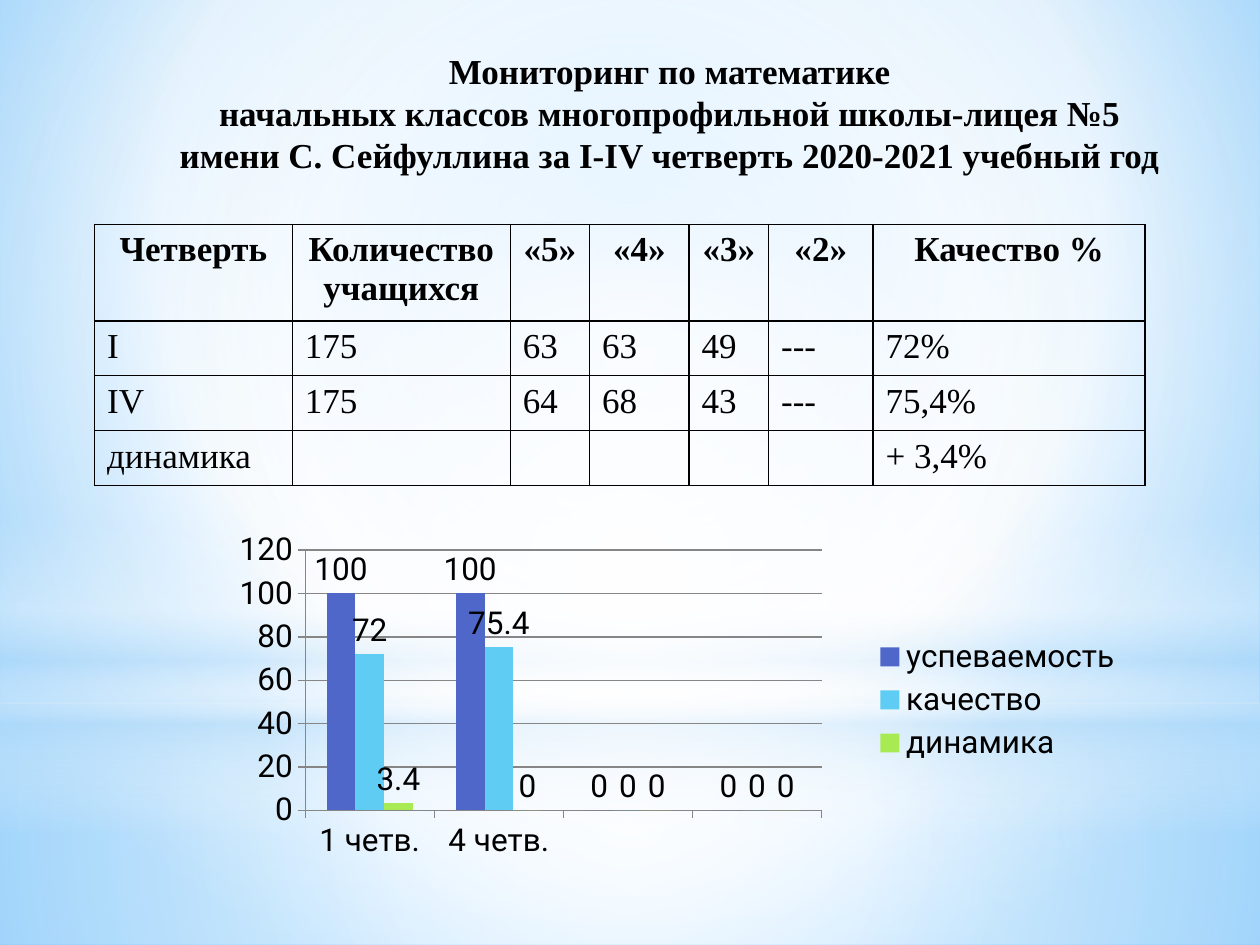
from dataclasses import dataclass
from typing import Optional

import lxml.etree
import pptx
import pptx.chart.data
import pptx.dml.color
import pptx.enum.chart
import pptx.enum.shapes
import pptx.enum.text
import pptx.oxml
import pptx.oxml.ns
import pptx.util

SLIDE_W, SLIDE_H = pptx.util.Inches(10), pptx.util.Inches(7.5)
SERIF, SANS = "Times New Roman", "Roboto"
COLORS = {
    "text": "000000", "axis": "868686", "white": "FFFFFF", "haze": "B4DCFA",
    "sky": "9ED5FF", "deep_sky": "5BB9FF",
    "success": "4E67C8", "quality": "5ECCF3", "dynamics": "A7EA52",
}
SHAPES = pptx.enum.shapes.MSO_SHAPE
ALIGN = pptx.enum.text.PP_ALIGN


@dataclass
class Area:
    """Place on the slide, in percent of its width and height."""
    left: float
    top: float
    width: float
    height: float

    def box(self) -> tuple:
        return (share_x(self.left), share_y(self.top),
                share_x(self.width), share_y(self.height))


@dataclass
class Gradient:
    """Stops are (position, colour, opacity); without an angle it is circular."""
    stops: list
    angle: Optional[int] = None
    focus: tuple = (50, 50, 50, 50)


@dataclass
class Glow:
    preset: int
    area: Area
    gradient: Gradient


@dataclass
class Series:
    name: str
    values: tuple
    color: str


def share_x(percent: float) -> int:
    return round(SLIDE_W * percent / 100)


def share_y(percent: float) -> int:
    return round(SLIDE_H * percent / 100)


def rgb(name: str) -> pptx.dml.color.RGBColor:
    return pptx.dml.color.RGBColor.from_string(COLORS[name])


def xml(tag: str, body: str, attributes: str = ""):
    prefix = tag.split(":")[0]
    return pptx.oxml.parse_xml(
        f"<{tag} {pptx.oxml.ns.nsdecls(prefix)} {attributes}>{body}</{tag}>")


def apply_gradient(fill, owner, gradient: Gradient) -> None:
    fill.solid()
    solid = owner.xpath(".//p:bgPr/a:solidFill | ./p:spPr/a:solidFill")[0]
    stops = "".join(
        f'<a:gs pos="{pos * 1000}"><a:srgbClr val="{COLORS[color]}">'
        f'<a:alpha val="{opacity * 1000}"/></a:srgbClr></a:gs>'
        for pos, color, opacity in gradient.stops)
    if gradient.angle is None:
        sides = " ".join(f'{side}="{value * 1000}"'
                         for side, value in zip("ltrb", gradient.focus))
        course = f'<a:path path="circle"><a:fillToRect {sides}/></a:path>'
    else:
        course = f'<a:lin ang="{gradient.angle * 60000}" scaled="0"/>'
    solid.getparent().replace(
        solid, xml("a:gradFill", f"<a:gsLst>{stops}</a:gsLst>{course}", 'rotWithShape="1"'))


def write(frame, *paragraphs: str, bold: bool = False, align=ALIGN.LEFT,
          size: int = 20, font: str = SERIF, color: str = "text") -> None:
    for index, text in enumerate(paragraphs):
        paragraph = frame.add_paragraph() if index else frame.paragraphs[0]
        paragraph.alignment = align
        style(paragraph.font, size, font, color)
        if text:
            run = paragraph.add_run()
            run.text = text
            style(run.font, size, font, color)
            run.font.bold = bold


def style(font, size: int, name: str, color: str) -> None:
    font.size, font.name = pptx.util.Pt(size), name
    font.color.rgb = rgb(color)


def add_glow(slide, glow: Glow) -> None:
    shape = slide.shapes.add_shape(glow.preset, *glow.area.box())
    shape.shadow.inherit = False
    shape.line.fill.background()
    apply_gradient(shape.fill, shape.element, glow.gradient)


def add_border(cell) -> None:
    properties = cell._tc.get_or_add_tcPr()
    for index, side in enumerate(("lnL", "lnR", "lnT", "lnB")):
        properties.insert(index, xml(
            f"a:{side}", f'<a:solidFill><a:srgbClr val="{COLORS["text"]}"/></a:solidFill>',
            'w="12700"'))


def add_results(slide, area: Area, columns: list, heights: list, rows: list) -> None:
    table = slide.shapes.add_table(len(rows), len(columns), *area.box()).table
    table.horz_banding = table.first_row = False
    for column, width in zip(table.columns, columns):
        column.width = share_x(width)
    for r, values in enumerate(rows):
        table.rows[r].height = share_y(heights[r])
        for c, value in enumerate(values):
            cell = table.cell(r, c)
            cell.fill.background()
            add_border(cell)
            write(cell.text_frame, value, bold=r == 0,
                  align=ALIGN.LEFT if r else ALIGN.CENTER)


def add_progress(slide, area: Area, categories: list, series: list, plot_area: dict) -> None:
    data = pptx.chart.data.CategoryChartData()
    data.categories = categories
    for item in series:
        data.add_series(item.name, item.values)
    chart = slide.shapes.add_chart(
        pptx.enum.chart.XL_CHART_TYPE.COLUMN_CLUSTERED, *area.box(), data).chart
    chart.has_title = False
    style(chart.font, 18, SANS, "text")
    chart.has_legend = True
    chart.legend.position = pptx.enum.chart.XL_LEGEND_POSITION.RIGHT
    chart.legend.include_in_layout = False

    plot = chart.plots[0]
    plot.gap_width, plot.overlap, plot.vary_by_categories = 150, 0, False
    for bars, item in zip(plot.series, series):
        bars.format.fill.solid()
        bars.format.fill.fore_color.rgb = rgb(item.color)
        bars.data_labels.show_value = True

    value_axis = chart.value_axis
    value_axis.has_major_gridlines = True
    value_axis.minimum_scale, value_axis.maximum_scale, value_axis.major_unit = 0, 120, 20
    for part in (value_axis, chart.category_axis, value_axis.major_gridlines):
        part.format.line.color.rgb = rgb("axis")
        part.format.line.width = pptx.util.Pt(0.75)

    # Inner plot area, in shares of the chart
    layout = "".join(f'<c:{key} val="{value}"/>' for key, value in plot_area.items())
    target = chart._chartSpace.xpath("c:chart/c:plotArea")[0]
    for old in target.xpath("c:layout"):
        target.remove(old)
    target.insert(0, xml("c:layout", '<c:manualLayout><c:layoutTarget val="inner"/>'
                         '<c:xMode val="edge"/><c:yMode val="edge"/>'
                         f"{layout}</c:manualLayout>"))


BACKDROP = Gradient([(0, "sky", 100), (60, "white", 100), (100, "deep_sky", 100)],
                    focus=(20, 10, 20, 60))
GLOWS = [
    Glow(SHAPES.RECTANGLE, Area(0, 74.4, 100, 25.6),
         Gradient([(0, "white", 91), (37, "white", 76), (100, "haze", 79)])),
    Glow(SHAPES.RECTANGLE, Area(0, 0, 100, 74.4),
         Gradient([(0, "white", 89), (48, "white", 62), (100, "haze", 79)])),
    Glow(SHAPES.RECTANGLE, Area(0, 54.93, 100, 33.33),
         Gradient([(0, "white", 0), (29, "white", 30), (45, "haze", 40),
                   (55, "white", 26), (65, "haze", 60), (100, "white", 0)], angle=90)),
    Glow(SHAPES.OVAL, Area(0, 23.33, 100, 74.4),
         Gradient([(0, "white", 100), (56, "white", 0)])),
]
RESULTS = [
    ["Четверть", "Количество учащихся", "«5»", "«4»", "«3»", "«2»", "Качество %"],
    ["І", "175", "63", "63", "49", "---", "72%"],
    ["ІV", "175", "64", "68", "43", "---", "75,4%"],
    ["динамика", "", "", "", "", "", "+ 3,4%"],
]
PROGRESS = [
    Series("успеваемость", (100, 100, 0, 0), "success"),
    Series("качество", (72, 75.4, 0, 0), "quality"),
    Series("динамика", (3.4, 0, 0, 0), "dynamics"),
]


def main() -> None:
    deck = pptx.Presentation()
    deck.slide_width, deck.slide_height = SLIDE_W, SLIDE_H
    slide = deck.slides.add_slide(deck.slide_layouts[6])

    # Sky backdrop
    apply_gradient(slide.background.fill, slide.element, BACKDROP)
    for glow in GLOWS:
        add_glow(slide, glow)

    # Title
    title = slide.shapes.add_textbox(*Area(13, 4.53, 80.3, 14.8).box()).text_frame
    title.word_wrap = True
    title.auto_size = pptx.enum.text.MSO_AUTO_SIZE.SHAPE_TO_FIT_TEXT
    write(title, "Мониторинг по математике",
          "начальных классов многопрофильной школы-лицея №5 "
          "имени С. Сейфуллина за І-ІV четверть 2020-2021 учебный год",
          bold=True, align=ALIGN.CENTER)

    # Results by quarter
    add_results(slide, Area(7.5, 23.73, 83.4, 27.6),
                [15.7, 17.3, 6.3, 7.9, 6.3, 8.3, 21.6], [10.2] + [5.8] * 3, RESULTS)
    add_progress(slide, Area(16.9, 55.2, 73.2, 37.73), ["1 четв.", "4 четв.", " ", " "],
                 PROGRESS, {"x": 0.1, "y": 0.08, "w": 0.56, "h": 0.73})
    deck.save("out.pptx")


if __name__ == "__main__":
    main()
